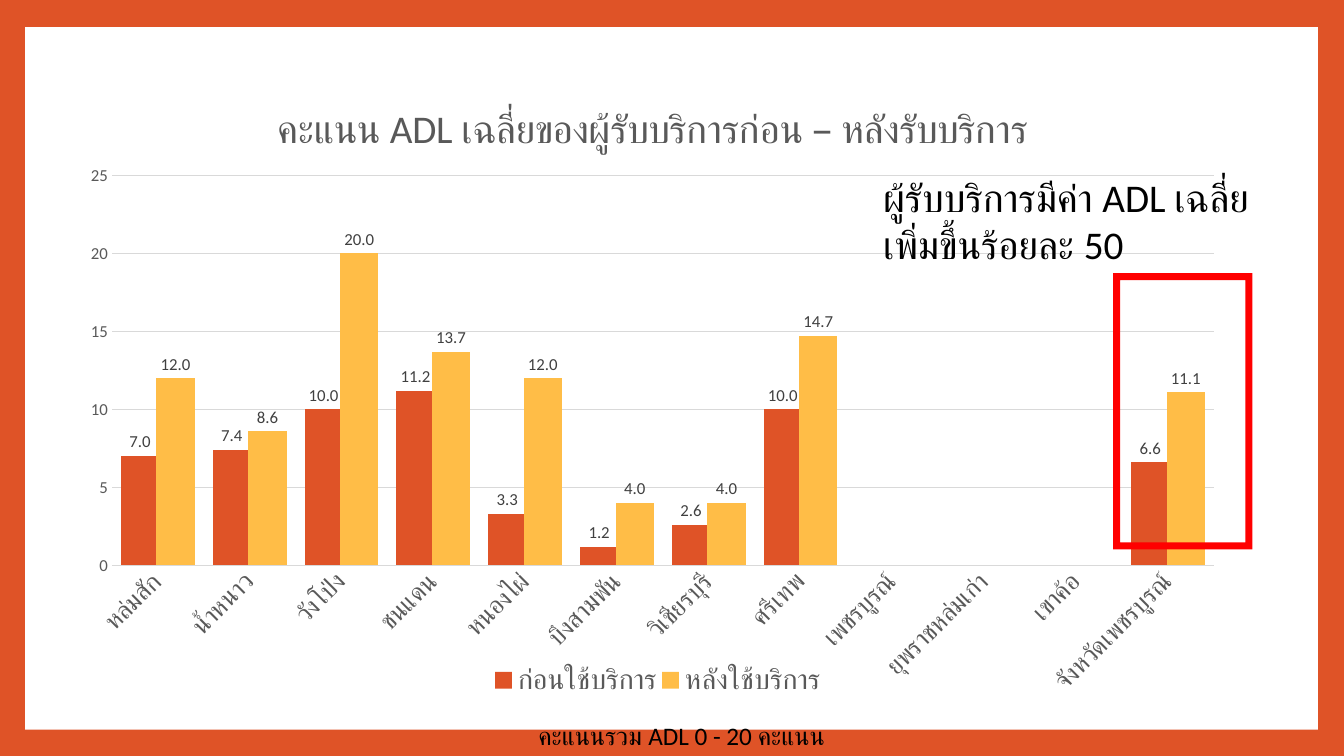
from dataclasses import dataclass

from lxml import etree
from pptx import Presentation
from pptx import util as u
from pptx.chart.data import CategoryChartData
from pptx.dml.color import RGBColor
from pptx.enum import chart as kinds, shapes
from pptx.oxml.ns import qn

FACE = "Calibri"
ORANGE, GOLD, GREY = "DF5327", "FFBD47", "595959"
PALE, DARK, BLACK, WHITE, RED = "D9D9D9", "404040", "000000", "FFFFFF", "FF0000"


@dataclass
class Box:
    left: float
    top: float
    width: float
    height: float

    def place(self) -> tuple:
        return tuple(map(u.Inches, (self.left, self.top, self.width, self.height)))


@dataclass
class Series:
    name: str
    color: str
    scores: list


@dataclass
class Note:
    box: Box
    size: int
    lines: list


@dataclass
class Panel:
    kind: int
    box: Box
    color: str


AREAS = ["หล่มสัก", "น้ำหนาว", "วังโป่ง", "ชนแดน", "หนองไผ่", "บึงสามพัน",
         "วิเชียรบุรี", "ศรีเทพ", "เพชรบูรณ์", "ยุพราชหล่มเก่า", "เขาค้อ",
         "จังหวัดเพชรบูรณ์"]
GAP = [None] * 3
SERIES = [
    Series("ก่อนใช้บริการ", ORANGE, [7, 7.4, 10, 11.2, 3.3, 1.2, 2.6, 10, *GAP, 6.6]),
    Series("หลังใช้บริการ", GOLD, [12, 8.6, 20, 13.7, 12, 4, 4, 14.7, *GAP, 11.1]),
]
TITLE = "คะแนน ADL เฉลี่ยของผู้รับบริการก่อน – หลังรับบริการ"
CHART = Box(0.66, 0.75, 11.62, 6.75)
PLOT = Box(1.11, 1.74, 10.93, 3.87)
LEGEND = Box(4.86, 6.5, 3.33, 0.5)
PAPER = Panel(shapes.MSO_SHAPE.RECTANGLE, Box(0.25, 0.27, 12.82, 6.97), WHITE)
FRAME = Panel(shapes.MSO_SHAPE.FRAME, Box(11.04, 2.71, 1.38, 2.74), RED)
NOTES = [
    Note(Box(8.66, 1.67, 4.09, 1.04), 28,
         ["ผู้รับบริการมีค่า ADL เฉลี่ย", "เพิ่มขึ้นร้อยละ 50"]),
    Note(Box(5.24, 7.1, 3.15, 0.4), 18, ["คะแนนรวม ADL 0 - 20 คะแนน"]),
]


def apply(target, values: dict) -> None:
    for key, value in values.items():
        setattr(target, key, value)


def paint(fill, color: str) -> None:
    fill.solid()
    fill.fore_color.rgb = RGBColor.from_string(color)


def style(font, size: int, color: str) -> None:
    apply(font, {"name": FACE, "size": u.Pt(size), "bold": False})
    paint(font.fill, color)


def rule(line) -> None:
    paint(line.fill, PALE)
    line.width = u.Pt(0.75)


def draw(slide, panel: Panel):
    shape = slide.shapes.add_shape(panel.kind, *panel.box.place())
    shape.shadow.inherit = False
    paint(shape.fill, panel.color)
    shape.line.fill.background()
    return shape


def write(slide, note: Note) -> None:
    frame = slide.shapes.add_textbox(*note.box.place()).text_frame
    frame.word_wrap = False
    frame.text = "\n".join(note.lines)
    for para in frame.paragraphs:
        style(para.runs[0].font, note.size, BLACK)


def pin(parent, index: int, box: Box, inner: bool = False) -> None:
    for old in parent.findall(qn("c:layout")):
        parent.remove(old)
    layout = etree.Element(qn("c:layout"))
    manual = etree.SubElement(layout, qn("c:manualLayout"))
    parts = {"layoutTarget": "inner"} if inner else {}
    parts |= {
        "xMode": "edge", "yMode": "edge",
        "x": (box.left - CHART.left) / CHART.width,
        "y": (box.top - CHART.top) / CHART.height,
        "w": box.width / CHART.width,
        "h": box.height / CHART.height,
    }
    for key, value in parts.items():
        etree.SubElement(manual, qn(f"c:{key}"), val=str(value))
    parent.insert(index, layout)


def plot(slide) -> None:
    data = CategoryChartData(number_format="0.0")
    data.categories = AREAS
    for item in SERIES:
        data.add_series(item.name, item.scores)
    chart = slide.shapes.add_chart(
        kinds.XL_CHART_TYPE.COLUMN_CLUSTERED, *CHART.place(), data).chart
    style(chart.font, 10, BLACK)

    head = chart.chart_title.text_frame
    head.text = TITLE
    style(head.paragraphs[0].runs[0].font, 28, GREY)
    chart.chart_title.include_in_layout = False

    chart.has_legend = True
    apply(chart.legend, {"position": kinds.XL_LEGEND_POSITION.BOTTOM,
                         "include_in_layout": False})
    style(chart.legend.font, 20, GREY)
    pin(chart.legend._element, 1, LEGEND)
    pin(chart._chartSpace.chart.plotArea, 0, PLOT, True)

    bars = chart.plots[0]
    apply(bars, {"gap_width": 47, "overlap": 7, "vary_by_categories": False})
    for item, series in zip(SERIES, bars.series):
        paint(series.format.fill, item.color)
        labels = series.data_labels
        apply(labels, {"show_value": True, "number_format": "0.0",
                       "number_format_is_linked": False,
                       "position": kinds.XL_LABEL_POSITION.OUTSIDE_END})
        style(labels.font, 12, DARK)

    base, scale = chart.category_axis, chart.value_axis
    for axis, size in ((base, 18), (scale, 12)):
        apply(axis, {"major_tick_mark": kinds.XL_TICK_MARK.NONE,
                     "minor_tick_mark": kinds.XL_TICK_MARK.NONE})
        style(axis.tick_labels.font, size, GREY)
    rule(base.format.line)
    base._element.find(qn("c:txPr")).find(qn("a:bodyPr")).set("rot", "-2700000")
    apply(scale, {"minimum_scale": 0, "maximum_scale": 25, "major_unit": 5})
    apply(scale.tick_labels, {"number_format": "0", "number_format_is_linked": False})
    scale.format.line.fill.background()
    rule(scale.major_gridlines.format.line)


def main() -> None:
    deck = Presentation()
    apply(deck, {"slide_width": u.Inches(13.33), "slide_height": u.Inches(7.5)})
    slide = deck.slides.add_slide(deck.slide_layouts[6])
    paint(slide.background.fill, ORANGE)
    draw(slide, PAPER)
    plot(slide)
    write(slide, NOTES[0])
    draw(slide, FRAME).adjustments[0] = 0.05
    write(slide, NOTES[1])
    deck.save("out.pptx")


if __name__ == "__main__":
    main()
